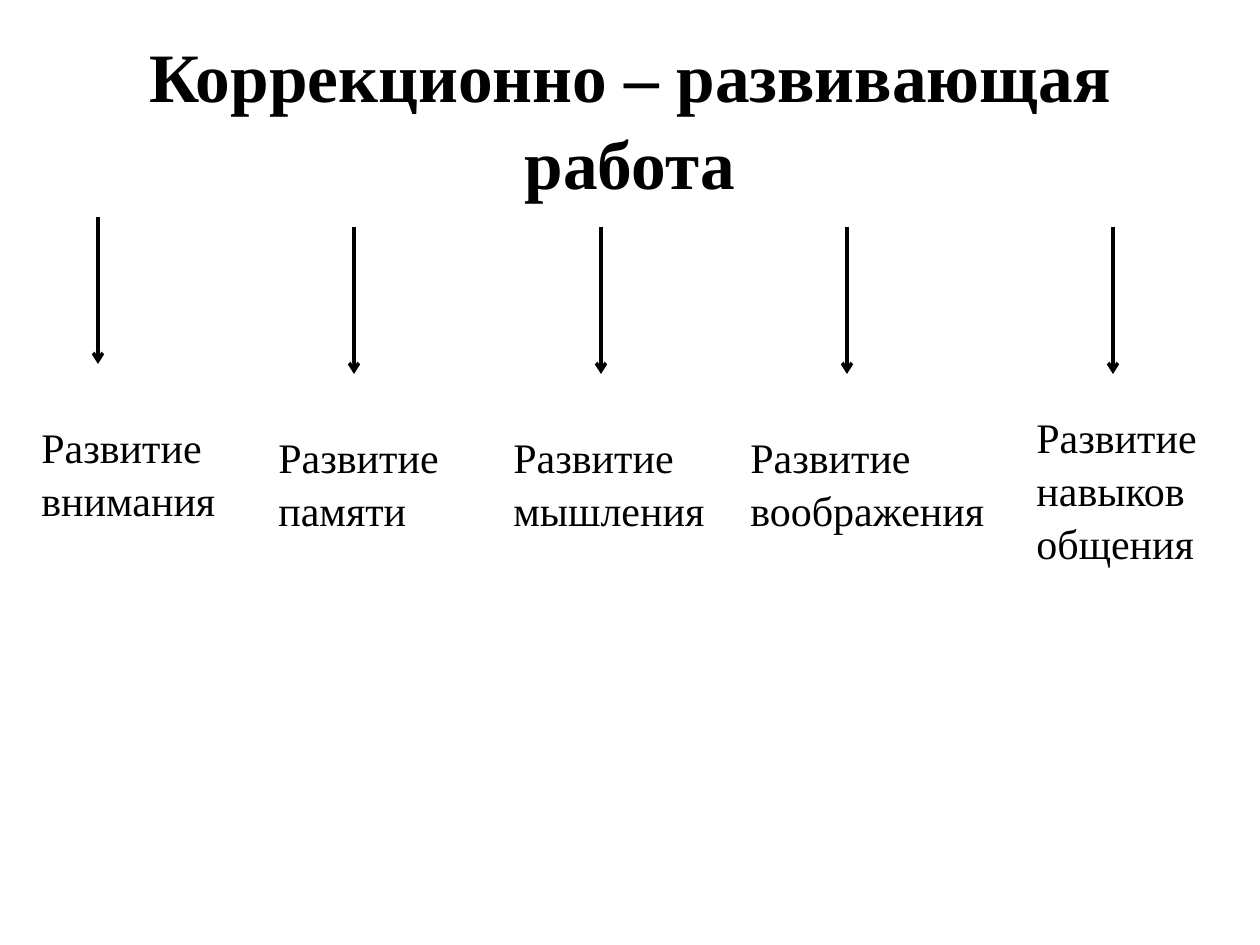
from dataclasses import dataclass

from lxml import etree
from pptx import Presentation
from pptx import util as u
from pptx.dml.color import RGBColor
from pptx.enum import shapes, text
from pptx.oxml.ns import qn

PX_PER_INCH = 126
BLACK = "000000"
FONT = "Times New Roman"
ARROW_LENGTH = 147


@dataclass(frozen=True)
class Direction:
    lines: tuple[str, ...]
    left: int
    top: int
    width: int
    height: int
    arrow_x: int
    arrow_top: int


DIRECTIONS = (
    Direction(("Развитие", "внимания"), 29, 413, 202, 115, 98, 217),
    Direction(("Развитие", "памяти"), 266, 423, 198, 115, 354, 227),
    Direction(("Развитие", "мышления"), 501, 423, 218, 115, 601, 227),
    Direction(("Развитие", "воображения"), 738, 423, 262, 115, 847, 227),
    Direction(("Развитие", "навыков", "общения"), 1024, 403, 198, 165, 1113, 227),
)


def px(length: int) -> u.Emu:
    return u.Inches(length / PX_PER_INCH)


def color(value: str) -> RGBColor:
    return RGBColor.from_string(value)


def apply(target, values: dict) -> None:
    for name, value in values.items():
        setattr(target, name, value)


def add_text(page, lines: tuple[str, ...], area: tuple[int, int, int, int],
             frame_format: dict, para_format: dict, font_format: dict) -> None:
    box = page.shapes.add_textbox(*map(px, area))
    frame = box.text_frame
    apply(frame, frame_format)
    for index, line in enumerate(lines):
        para = frame.add_paragraph() if index else frame.paragraphs[0]
        apply(para, {"line_spacing": 1.05, **para_format})
        span = para.add_run()
        span.text = line
        apply(span.font, {"name": FONT, **font_format})
        span.font.color.rgb = color(BLACK)


def add_arrow(page, x: int, top: int) -> None:
    arrow = page.shapes.add_connector(
        shapes.MSO_CONNECTOR.STRAIGHT, px(x), px(top), px(x), px(top + ARROW_LENGTH))
    arrow.line.width = u.Pt(2)
    arrow.line.color.rgb = color(BLACK)
    etree.SubElement(arrow.line._get_or_add_ln(), qn("a:tailEnd"), type="arrow")
    etree.SubElement(arrow._element.spPr, qn("a:effectLst"))


def main() -> None:
    deck = Presentation()
    apply(deck, {"slide_width": px(1260), "slide_height": px(945)})
    page = deck.slides.add_slide(deck.slide_layouts[6])

    add_text(
        page, ("Коррекционно – развивающая работа",), (63, 38, 1134, 157),
        {"word_wrap": True, "vertical_anchor": text.MSO_ANCHOR.MIDDLE},
        {"alignment": text.PP_ALIGN.CENTER},
        {"size": u.Pt(39.6), "bold": True})

    for item in DIRECTIONS:
        add_arrow(page, item.arrow_x, item.arrow_top)
    for item in DIRECTIONS:
        add_text(
            page, item.lines, (item.left, item.top, item.width, item.height),
            {"word_wrap": False, "auto_size": text.MSO_AUTO_SIZE.SHAPE_TO_FIT_TEXT},
            {"alignment": text.PP_ALIGN.LEFT},
            {"size": u.Pt(24)})

    deck.save("out.pptx")


if __name__ == "__main__":
    main()
